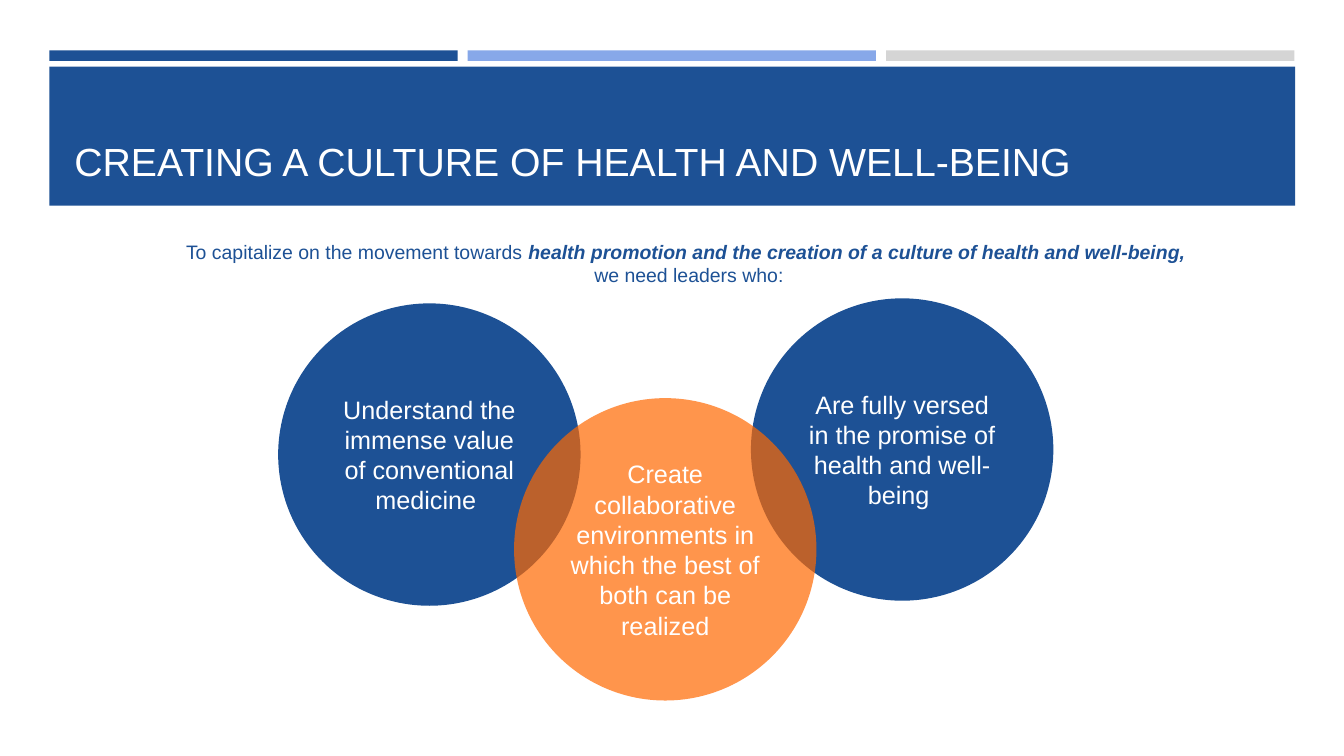
from dataclasses import dataclass

from lxml.etree import SubElement
from pptx import Presentation
from pptx.dml.color import RGBColor
from pptx.enum.shapes import MSO_SHAPE
from pptx.enum.text import MSO_ANCHOR, PP_ALIGN
from pptx.oxml.ns import qn
from pptx.shapes.autoshape import Shape
from pptx.slide import Slide
from pptx.text.text import TextFrame
from pptx.util import Inches, Length, Pt

NAVY = RGBColor(0x1D, 0x51, 0x95)
SKY = RGBColor(0x87, 0xA8, 0xE9)
SILVER = RGBColor(0xD5, 0xD5, 0xD5)
ORANGE = RGBColor(0xFF, 0x68, 0x00)
WHITE = RGBColor(0xFF, 0xFF, 0xFF)

FONT = "Arial"
CELL = 0.1  # side of a grid cell, in inches
SLIDE_COLUMNS, SLIDE_ROWS = 133.33, 75
BAND_LEFT, BAR_WIDTH, BAR_GAP = 4.9, 40.5, 1
CIRCLE_SIZE = 30


@dataclass(frozen=True)
class Box:
    column: float
    row: float
    columns: float
    rows: float

    def lengths(self) -> list[Length]:
        return [grid(cells) for cells in (self.column, self.row, self.columns, self.rows)]


@dataclass(frozen=True)
class Phrase:
    text: str
    emphasis: bool = False


@dataclass(frozen=True)
class Circle:
    column: float
    row: float
    color: RGBColor
    text: str
    opacity: int = 100


BAR_COLORS = [NAVY, SKY, SILVER]
BANNER = Box(BAND_LEFT, 6.6, 123.6, 13.8)
TITLE = Box(6.4, 8, 120.6, 10.8)
INTRO = Box(6.4, 23.3, 120.6, 4.9)
INTRO_INDENT = 4.3

INTRO_LINES = [
    [
        Phrase("To capitalize on the movement towards "),
        Phrase("health promotion and the creation of a culture of health and well-being, ", True),
    ],
    [Phrase("we need leaders who:")],
]

CIRCLES = [
    Circle(74.5, 29.6, NAVY, "Are fully versed in the promise of health and well-being "),
    Circle(27.6, 30.1, NAVY, "Understand the immense value of conventional medicine "),
    Circle(51, 39.5, ORANGE,
           "Create collaborative environments in which the best of both can be realized", 70),
]


def grid(cells: float) -> Length:
    return Inches(cells * CELL)


def apply_format(target: object, values: dict[str, object]) -> None:
    for name, value in values.items():
        setattr(target, name, value)


def add_filled_shape(slide: Slide, kind: MSO_SHAPE, box: Box, color: RGBColor,
                     opacity: int = 100) -> Shape:
    shape = slide.shapes.add_shape(kind, *box.lengths())
    shape.shadow.inherit = False
    shape.line.fill.background()
    shape.fill.solid()
    shape.fill.fore_color.rgb = color
    if opacity < 100:
        color_element = shape.fill._xPr.find(qn("a:solidFill"))[0]
        SubElement(color_element, qn("a:alpha"), val=str(opacity * 1000))
    return shape


def write_lines(frame: TextFrame, lines: list[list[Phrase]], size: float, color: RGBColor,
                alignment: PP_ALIGN, anchor: MSO_ANCHOR) -> None:
    apply_format(frame, {"word_wrap": True, "vertical_anchor": anchor})
    paragraph = frame.paragraphs[0]
    paragraph.alignment = alignment
    for index, line in enumerate(lines):
        if index:
            paragraph.add_line_break()
        for phrase in line:
            run = paragraph.add_run()
            run.text = phrase.text
            run.font.color.rgb = color
            apply_format(run.font, {"name": FONT, "size": Pt(size),
                                    "bold": phrase.emphasis, "italic": phrase.emphasis})


def add_header(slide: Slide) -> None:
    for index, color in enumerate(BAR_COLORS):
        bar = Box(BAND_LEFT + index * (BAR_WIDTH + BAR_GAP), 5, BAR_WIDTH, 1.05)
        add_filled_shape(slide, MSO_SHAPE.RECTANGLE, bar, color)
    add_filled_shape(slide, MSO_SHAPE.RECTANGLE, BANNER, NAVY)
    title = slide.shapes.add_textbox(*TITLE.lengths())
    write_lines(title.text_frame, [[Phrase("CREATING A CULTURE OF HEALTH AND WELL-BEING")]],
                28, WHITE, PP_ALIGN.LEFT, MSO_ANCHOR.BOTTOM)


def add_intro(slide: Slide) -> None:
    intro = slide.shapes.add_textbox(*INTRO.lengths())
    intro.text_frame.margin_left = grid(INTRO_INDENT)
    write_lines(intro.text_frame, INTRO_LINES, 13.9, NAVY, PP_ALIGN.CENTER, MSO_ANCHOR.TOP)


def add_circle(slide: Slide, circle: Circle) -> None:
    box = Box(circle.column, circle.row, CIRCLE_SIZE, CIRCLE_SIZE)
    shape = add_filled_shape(slide, MSO_SHAPE.OVAL, box, circle.color, circle.opacity)
    write_lines(shape.text_frame, [[Phrase(circle.text)]],
                18, WHITE, PP_ALIGN.CENTER, MSO_ANCHOR.MIDDLE)


def main() -> None:
    presentation = Presentation()
    apply_format(presentation, {"slide_width": grid(SLIDE_COLUMNS),
                                "slide_height": grid(SLIDE_ROWS)})
    slide = presentation.slides.add_slide(presentation.slide_layouts[6])

    # Header bars, banner and title
    add_header(slide)

    # Introductory sentence
    add_intro(slide)

    # Overlapping circles, back to front
    for circle in CIRCLES:
        add_circle(slide, circle)

    presentation.save("out.pptx")


if __name__ == "__main__":
    main()
